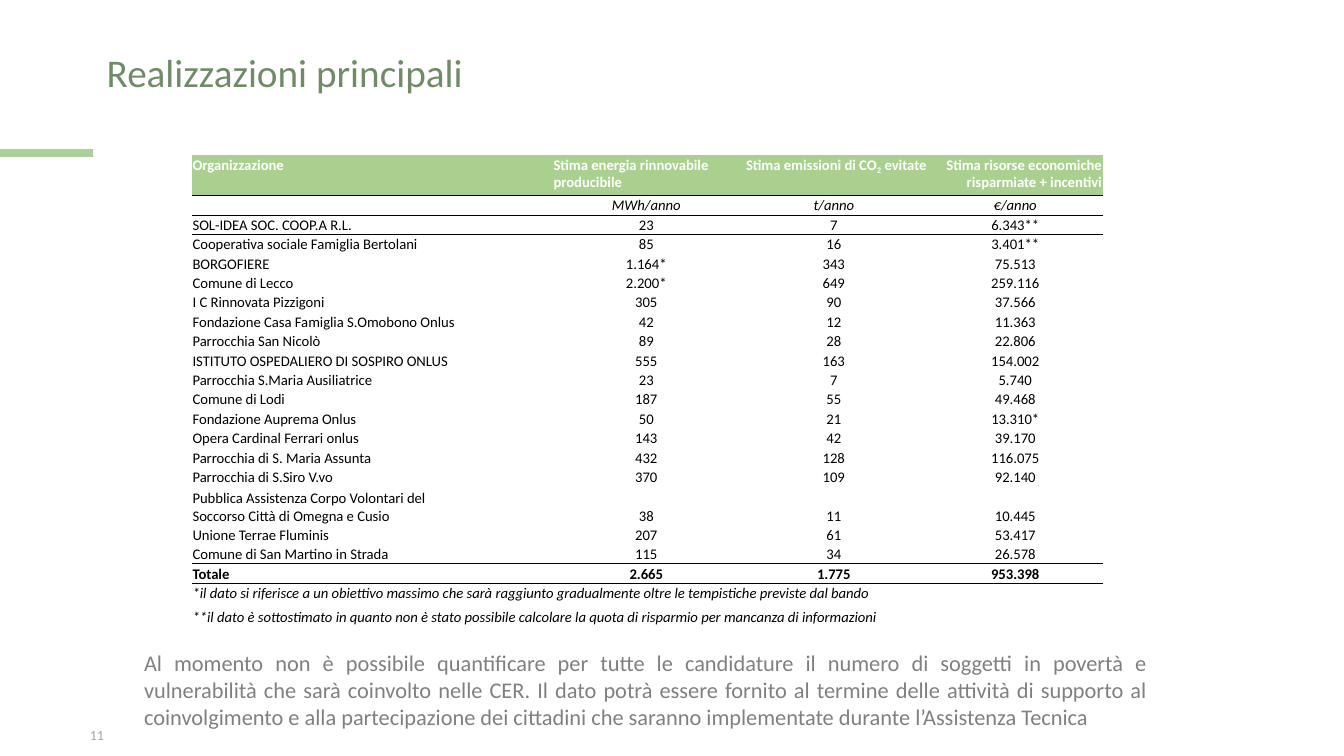
from dataclasses import dataclass
from lxml.etree import SubElement
from pptx import Presentation
from pptx.dml.color import RGBColor
from pptx.enum.shapes import MSO_CONNECTOR
from pptx.enum.text import MSO_ANCHOR, PP_ALIGN
from pptx.oxml import parse_xml
from pptx.oxml.ns import nsdecls, qn
from pptx.util import Inches, Pt


@dataclass(frozen=True)
class Theme:
    font: str = "Calibri"
    title: str = "708C67"
    accent: str = "A8D19A"
    header: str = "A9D08E"
    white: str = "FFFFFF"
    ink: str = "000000"
    body: str = "808080"
    number: str = "A6A6A6"
    title_size: float = 28
    body_size: float = 16
    table_size: float = 10.5
    number_size: float = 10


THEME = Theme()
PLAIN_STYLE = "{2D5ABB26-0587-4C30-8999-92F81FD0307C}"
COLUMN_WIDTHS = [2.85, 0.73, 1.86, 1.86, 1.74]
VALUE_COLUMNS = [0, 2, 3, 4]
SUBSCRIPT = "|"
HEADER = ["Organizzazione", "Stima energia rinnovabile producibile",
          "Stima emissioni di CO|2| evitate",
          "Stima risorse economiche risparmiate + incentivi"]
UNITS = ["", "MWh/anno", "t/anno", "€/anno"]
ORGANISATIONS = [
    ["SOL-IDEA SOC. COOP.A R.L.", "23", "7", "6.343**"],
    ["Cooperativa sociale Famiglia Bertolani", "85", "16", "3.401**"],
    ["BORGOFIERE", "1.164*", "343", "75.513"],
    ["Comune di Lecco", "2.200*", "649", "259.116"],
    ["I C Rinnovata Pizzigoni", "305", "90", "37.566"],
    ["Fondazione Casa Famiglia S.Omobono Onlus", "42", "12", "11.363"],
    ["Parrocchia San Nicolò", "89", "28", "22.806"],
    ["ISTITUTO OSPEDALIERO DI SOSPIRO ONLUS", "555", "163", "154.002"],
    ["Parrocchia S.Maria Ausiliatrice", "23", "7", "5.740"],
    ["Comune di Lodi", "187", "55", "49.468"],
    ["Fondazione Auprema Onlus", "50", "21", "13.310*"],
    ["Opera Cardinal Ferrari onlus", "143", "42", "39.170"],
    ["Parrocchia di S. Maria Assunta", "432", "128", "116.075"],
    ["Parrocchia di S.Siro V.vo", "370", "109", "92.140"],
    ["Pubblica Assistenza Corpo Volontari del Soccorso Città di Omegna e Cusio",
     "38", "11", "10.445"],
    ["Unione Terrae Fluminis", "207", "61", "53.417"],
    ["Comune di San Martino in Strada", "115", "34", "26.578"],
]
TOTAL = ["Totale", "2.665", "1.775", "953.398"]
NOTES = [
    "*il dato si riferisce a un obiettivo massimo che sarà raggiunto gradualmente "
    "oltre le tempistiche previste dal bando",
    "**il dato è sottostimato in quanto non è stato possibile calcolare la quota "
    "di risparmio per mancanza di informazioni",
]
REMARK = (
    "Al momento non è possibile quantificare per tutte le candidature il numero di "
    "soggetti in povertà e vulnerabilità che sarà coinvolto nelle CER. Il dato potrà "
    "essere fornito al termine delle attività di supporto al coinvolgimento e alla "
    "partecipazione dei cittadini che saranno implementate durante l’Assistenza Tecnica")


def apply(target, values):
    for name, value in values.items():
        setattr(target, name, value)


def add_run(paragraph, text, size, color, **style):
    run = paragraph.add_run()
    run.text = text
    apply(run.font, {"name": THEME.font, "size": Pt(size), **style})
    run.font.color.rgb = RGBColor.from_string(color)
    return run


def add_text(slide, box, text, size, color, frame_format=None, paragraph_format=None):
    frame = slide.shapes.add_textbox(*map(Inches, box)).text_frame
    apply(frame, {"word_wrap": True, **(frame_format or {})})
    paragraph = frame.paragraphs[0]
    apply(paragraph, paragraph_format or {})
    add_run(paragraph, text, size, color)


def add_accent(slide, left, top, width):
    accent = slide.shapes.add_connector(
        MSO_CONNECTOR.STRAIGHT, Inches(left + width), Inches(top), Inches(left), Inches(top))
    accent.line.width = Pt(6)
    accent.line.color.rgb = RGBColor.from_string(THEME.accent)
    SubElement(accent._element.spPr, qn("a:effectLst"))


def fill_cell(cell, text, align, anchor, color, **style):
    apply(cell, {"margin_left": Inches(0.01), "margin_right": Inches(0.01),
                 "margin_top": Inches(0.01), "margin_bottom": 0,
                 "vertical_anchor": anchor})
    paragraph = cell.text_frame.paragraphs[0]
    paragraph.alignment = align
    if not text:
        SubElement(paragraph._p, qn("a:endParaRPr"), sz=str(int(THEME.table_size * 100)))
        return
    for index, piece in enumerate(text.split(SUBSCRIPT)):
        run = add_run(paragraph, piece, THEME.table_size, color, **style)
        if index % 2:
            run.font._element.set("baseline", "-25000")


def add_rule(table, row, width):
    for column in range(len(COLUMN_WIDTHS)):
        for side, edge_row in (("lnB", row), ("lnT", row + 1)):
            properties = table.cell(edge_row, column)._tc.get_or_add_tcPr()
            properties.insert(0, parse_xml(
                f'<a:{side} {nsdecls("a")} w="{Pt(width)}"><a:solidFill>'
                f'<a:srgbClr val="{THEME.ink}"/></a:solidFill></a:{side}>'))


def add_estimates(slide, left, top, width, height):
    records = [HEADER, UNITS, *ORGANISATIONS, TOTAL, *([note, "", "", ""] for note in NOTES)]
    total_row = len(records) - len(NOTES) - 1
    table = slide.shapes.add_table(
        len(records), len(COLUMN_WIDTHS),
        *map(Inches, (left, top, width, height))).table
    apply(table, {"first_row": False, "horz_banding": False})
    table._tbl.tblPr.find(qn("a:tableStyleId")).text = PLAIN_STYLE
    for column, column_width in zip(table.columns, COLUMN_WIDTHS):
        column.width = Inches(column_width)

    wrapped_row = next(i for i, record in enumerate(records) if record[0].startswith("Pubblica"))
    tall_rows = {0: 0.4, wrapped_row: 0.38, len(records) - 1: 0.24}
    row_height = (height - sum(tall_rows.values())) / (len(records) - len(tall_rows))
    header_aligns = [PP_ALIGN.LEFT, PP_ALIGN.LEFT, PP_ALIGN.LEFT, PP_ALIGN.RIGHT, PP_ALIGN.RIGHT]
    body_aligns = [PP_ALIGN.LEFT] + [PP_ALIGN.CENTER] * 4

    for row, record in enumerate(records):
        table.rows[row].height = Inches(tall_rows.get(row, row_height))
        header, note = row == 0, row > total_row
        aligns = header_aligns if header else body_aligns
        anchor = (MSO_ANCHOR.TOP if header else
                  MSO_ANCHOR.BOTTOM if note or row == wrapped_row else MSO_ANCHOR.MIDDLE)
        texts = dict(zip(VALUE_COLUMNS, record))
        for column, align in enumerate(aligns):
            cell = table.cell(row, column)
            if header:
                cell.fill.solid()
                cell.fill.fore_color.rgb = RGBColor.from_string(THEME.header)
            else:
                cell.fill.background()
            fill_cell(cell, texts.get(column, ""), align, anchor,
                      THEME.white if header else THEME.ink,
                      bold=row in (0, total_row), italic=row == 1 or note)
        if note:
            table.cell(row, 0).merge(table.cell(row, 3))
    for row, rule_width in ((0, 0.5), (1, 0.5), (total_row - 1, 1)):
        add_rule(table, row, rule_width)


def build_results_slide(presentation):
    slide = presentation.slides.add_slide(presentation.slide_layouts[6])
    add_accent(slide, 0, 1.52, 0.92)
    add_text(slide, (0.96, 0.48, 11.42, 1.06), "Realizzazioni principali",
             THEME.title_size, THEME.title, paragraph_format={"line_spacing": 0.9})
    add_text(slide, (0.65, 7.16, 0.48, 0.27), "11", THEME.number_size, THEME.number,
             {"vertical_anchor": MSO_ANCHOR.MIDDLE}, {"alignment": PP_ALIGN.RIGHT})
    add_estimates(slide, 1.9, 1.54, 9.03, 4.68)
    add_text(slide, (1.33, 6.39, 10.15, 0.91), REMARK, THEME.body_size, THEME.body,
             paragraph_format={"alignment": PP_ALIGN.JUSTIFY})


def main():
    presentation = Presentation()
    apply(presentation, {"slide_width": Inches(13.33), "slide_height": Inches(7.5)})
    build_results_slide(presentation)
    presentation.save("out.pptx")


if __name__ == "__main__":
    main()
